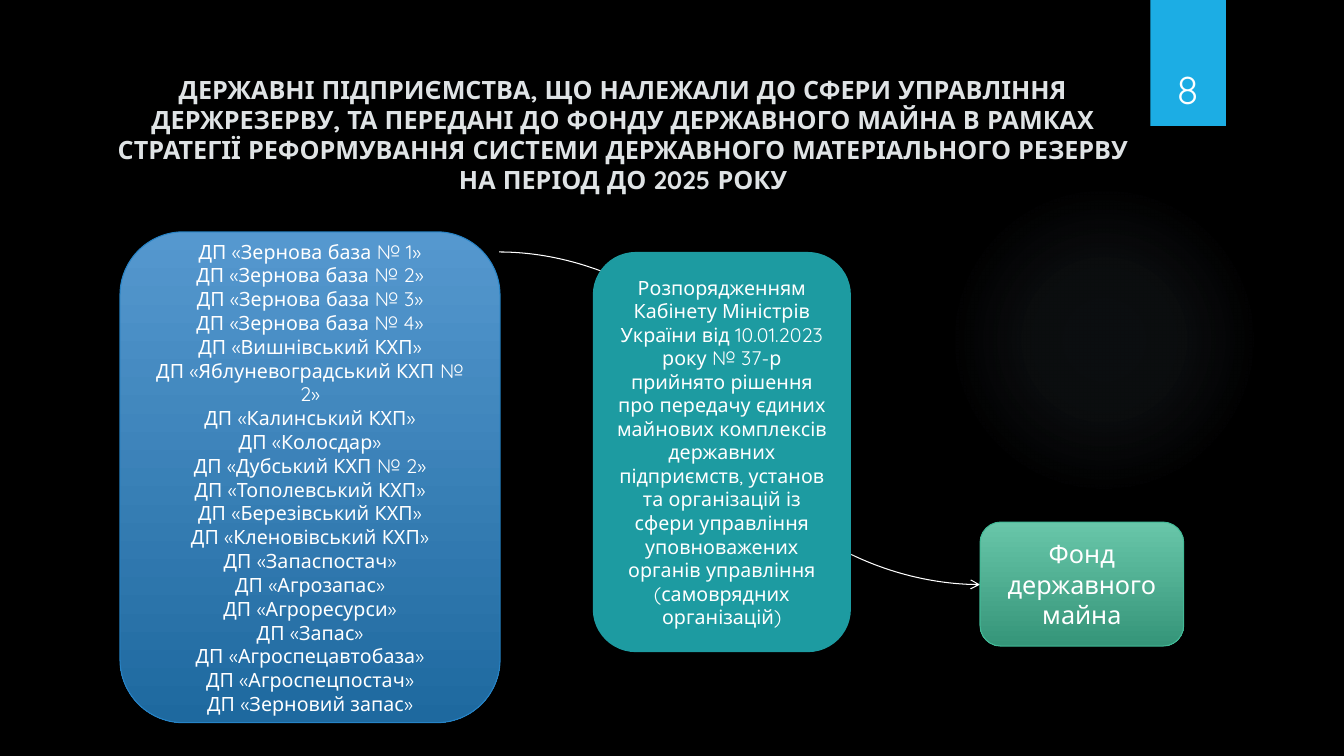
from dataclasses import dataclass

from lxml.etree import SubElement
from pptx import Presentation
from pptx.dml.color import RGBColor
from pptx.enum.shapes import MSO_CONNECTOR as Connector, MSO_SHAPE as Shape
from pptx.enum.text import MSO_ANCHOR as Anchor, PP_ALIGN as Align
from pptx.oxml.ns import qn
from pptx.util import Inches, Pt


@dataclass(frozen=True)
class Theme:
    font: str = "Quicksand"
    background: str = "000000"
    white: str = "FFFFFF"
    title: str = "DFE3E5"
    tab: str = "1CADE4"
    glow: str = "A0C1D5"
    decree: str = "1D9BA1"
    enterprises: tuple = ("5598CF", "1E699F")
    enterprises_line: str = "2683C6"
    fund: tuple = ("68C6A9", "359579")
    fund_line: str = "42BA97"
    body_size: int = 14
    heading_size: int = 18
    number_size: int = 28
    line_width: float = 0.75


THEME = Theme()

TITLE = (
    "ДЕРЖАВНІ ПІДПРИЄМСТВА, ЩО НАЛЕЖАЛИ ДО СФЕРИ УПРАВЛІННЯ ДЕРЖРЕЗЕРВУ, "
    "ТА ПЕРЕДАНІ ДО ФОНДУ ДЕРЖАВНОГО МАЙНА В РАМКАХ СТРАТЕГІЇ РЕФОРМУВАННЯ "
    "СИСТЕМИ ДЕРЖАВНОГО МАТЕРІАЛЬНОГО РЕЗЕРВУ НА ПЕРІОД ДО 2025 РОКУ"
)
ENTERPRISES = (
    "Зернова база № 1", "Зернова база № 2", "Зернова база № 3",
    "Зернова база № 4", "Вишнівський КХП", "Яблуневоградський КХП № 2",
    "Калинський КХП", "Колосдар", "Дубský КХП № 2".replace("ský", "ський"),
    "Тополевський КХП", "Березівський КХП", "Кленовівський КХП",
    "Запаспостач", "Агрозапас", "Агроресурси", "Запас",
    "Агроспецавтобаза", "Агроспецпостач", "Зерновий запас",
)
DECREE = (
    "Розпорядженням Кабінету Міністрів України від 10.01.2023 року № 37-р "
    "прийнято рішення про передачу єдиних майнових комплексів державних "
    "підприємств, установ та організацій із сфери управління уповноважених "
    "органів управління (самоврядних організацій)"
)


def rgb(color):
    return RGBColor.from_string(color)


def write(holder, *paragraphs, size, color=THEME.white, bold=False,
          anchor=Anchor.MIDDLE, spacing=None):
    frame = holder.text_frame
    frame.word_wrap = True
    frame.vertical_anchor = anchor
    for index, text in enumerate(paragraphs):
        paragraph = frame.add_paragraph() if index else frame.paragraphs[0]
        paragraph.alignment = Align.CENTER
        if spacing:
            paragraph.line_spacing = Pt(spacing)
        run = paragraph.add_run()
        run.text = text
        run.font.name = THEME.font
        run.font.size = Pt(size)
        run.font.bold = bold
        run.font.color.rgb = rgb(color)


def add_text(slide, box, *paragraphs, **text_format):
    write(slide.shapes.add_textbox(*map(Inches, box)), *paragraphs, **text_format)


def add_panel(slide, kind, box, fill, line=None):
    """Add a shape whose fill is one colour or a top-to-bottom pair."""
    panel = slide.shapes.add_shape(kind, *map(Inches, box))
    panel.shadow.inherit = False
    if isinstance(fill, tuple):
        panel.fill.gradient()
        panel.fill.gradient_angle = 270
        for stop, color in zip(panel.fill.gradient_stops, fill):
            stop.color.rgb = rgb(color)
    else:
        panel.fill.solid()
        panel.fill.fore_color.rgb = rgb(fill)
    if line:
        panel.line.color.rgb = rgb(line)
        panel.line.width = Pt(THEME.line_width)
    else:
        panel.line.fill.background()
    return panel


def add_color(parent, color, opacity):
    tone = SubElement(parent, qn("a:srgbClr"), val=color)
    SubElement(tone, qn("a:alpha"), val=str(opacity * 1000))


def cast_shadow(panel, opacity, blur, distance):
    effects = panel.element.spPr.find(qn("a:effectLst"))
    shadow = SubElement(effects, qn("a:outerShdw"), blurRad=str(Pt(blur)),
                        dist=str(Pt(distance)), dir="5400000", rotWithShape="0")
    add_color(shadow, "000000", opacity)


def add_glow(slide, box):
    """Add a circle that fades out from its centre."""
    glow = add_panel(slide, Shape.OVAL, box, (THEME.glow, THEME.glow))
    gradient = glow.element.spPr.find(qn("a:gradFill"))
    for child in list(gradient):
        gradient.remove(child)
    stops = SubElement(gradient, qn("a:gsLst"))
    for position, opacity in ((0, 7), (36, 6), (69, 0), (100, 0)):
        stop = SubElement(stops, qn("a:gs"), pos=str(position * 1000))
        add_color(stop, THEME.glow, opacity)
    circle = SubElement(gradient, qn("a:path"), path="circle")
    SubElement(circle, qn("a:fillToRect"),
               dict.fromkeys("ltrb", "50000"))


def add_curved_arrow(slide, start, end):
    arrow = slide.shapes.add_connector(
        Connector.CURVE, *map(Inches, (*start, *end)))
    arrow.line.color.rgb = rgb(THEME.white)
    arrow.line.width = Pt(THEME.line_width)
    SubElement(arrow.line._get_or_add_ln(), qn("a:tailEnd"), type="arrow")
    SubElement(arrow.element.spPr, qn("a:effectLst"))


def main():
    deck = Presentation()
    deck.slide_width, deck.slide_height = Inches(13.33), Inches(7.5)
    slide = deck.slides.add_slide(deck.slide_layouts[6])
    slide.background.fill.solid()
    slide.background.fill.fore_color.rgb = rgb(THEME.background)

    add_glow(slide, (9.41, 1.83, 3.08, 3.08))
    number_tab = add_panel(slide, Shape.RECTANGLE, (11.41, 0, 0.75, 1.25), THEME.tab)
    cast_shadow(number_tab, opacity=45, blur=3, distance=2)
    add_text(slide, (0.93, 0.5, 10.5, 1.67), TITLE,
             size=THEME.heading_size, color=THEME.title, bold=True)

    enterprises = add_panel(slide, Shape.ROUNDED_RECTANGLE, (1.19, 2.3, 3.77, 4.87),
                            THEME.enterprises, THEME.enterprises_line)
    write(enterprises, *(f"ДП «{name}»" for name in ENTERPRISES),
          size=THEME.body_size, spacing=17)

    add_curved_arrow(slide, (4.95, 2.5), (9.72, 5.8))

    decree = add_panel(slide, Shape.ROUNDED_RECTANGLE, (5.88, 2.5, 2.56, 3.97),
                       THEME.decree)
    cast_shadow(decree, opacity=32, blur=3.5, distance=2.2)
    write(decree, DECREE, size=THEME.body_size)

    fund = add_panel(slide, Shape.ROUNDED_RECTANGLE, (9.72, 5.18, 2.02, 1.23),
                     THEME.fund, THEME.fund_line)
    write(fund, "Фонд державного майна", size=THEME.heading_size)

    add_text(slide, (11.32, 0.32, 0.92, 0.84), "8",
             size=THEME.number_size, anchor=Anchor.BOTTOM)
    deck.save("out.pptx")


if __name__ == "__main__":
    main()
